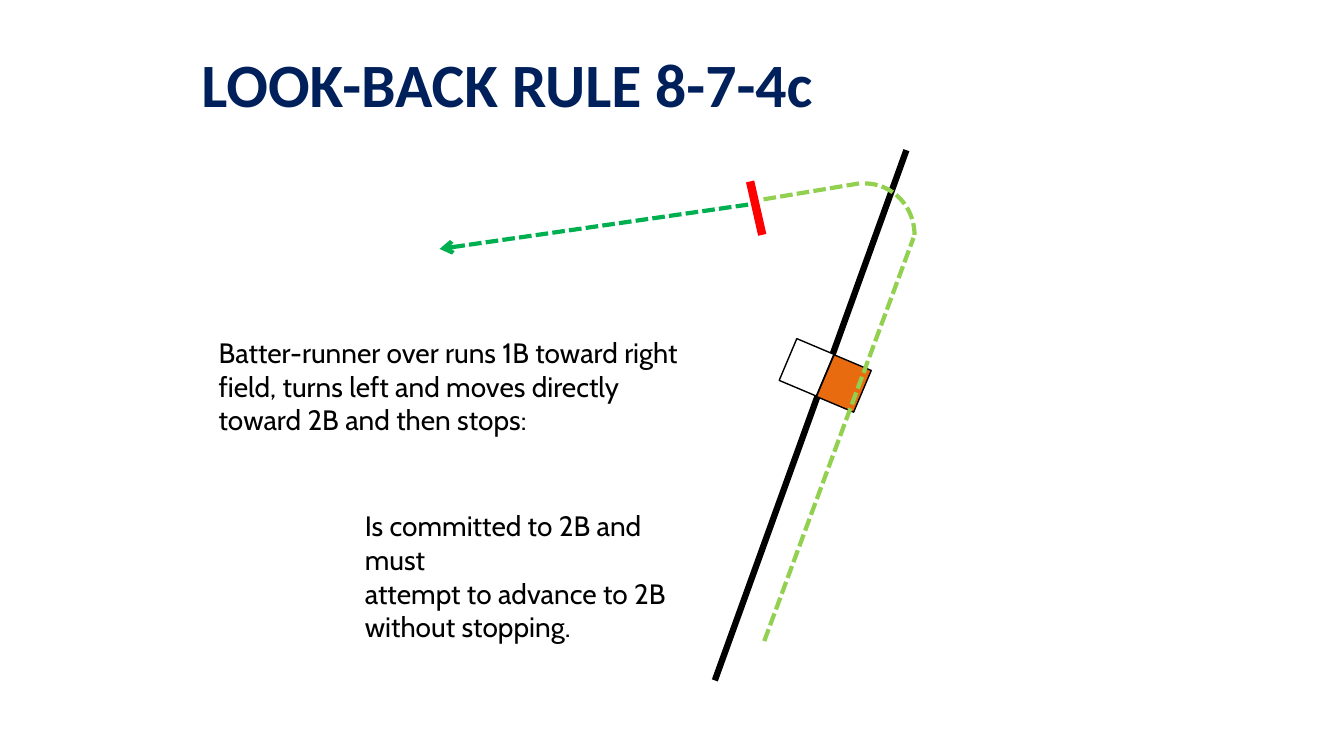
from dataclasses import dataclass

from lxml import etree
from pptx import Presentation
from pptx import util as u
from pptx.dml.color import RGBColor
from pptx.enum import dml, shapes, text
from pptx.oxml import ns

Inches, Pt = u.Inches, u.Pt


@dataclass(frozen=True)
class Theme:
    navy: str = "00205B"
    black: str = "000000"
    white: str = "FFFFFF"
    orange: str = "E96B10"
    lime: str = "92D050"
    green: str = "00B050"
    red: str = "FF0000"
    title_font: str = "Calibri"
    body_font: str = "Cabin"
    title_size: int = 44
    body_size: int = 20


THEME = Theme()


def style_line(line, color, width, dashed=False):
    line.color.rgb = RGBColor.from_string(color)
    line.width = Pt(width)
    if dashed:
        line.dash_style = dml.MSO_LINE.SQUARE_DOT


def add_text(page, place, paragraphs, font, size, color, bold=False,
             anchor=text.MSO_ANCHOR.TOP, spacing=None):
    box = page.shapes.add_textbox(*map(Inches, place))
    frame = box.text_frame
    frame.text = "\n".join(paragraphs)
    frame.word_wrap = True
    frame.vertical_anchor = anchor
    for para in frame.paragraphs:
        para.line_spacing = spacing
        for span in para.runs:
            span.font.name = font
            span.font.size = Pt(size)
            span.font.bold = bold
            span.font.color.rgb = RGBColor.from_string(color)


def add_line(page, start, end, color, width, dashed=False, arrow=False):
    connector = page.shapes.add_connector(
        shapes.MSO_CONNECTOR.STRAIGHT, *map(Inches, (*start, *end)))
    style_line(connector.line, color, width, dashed)
    if arrow:
        outline = connector.line._get_or_add_ln()
        etree.SubElement(outline, ns.qn("a:tailEnd"), type="arrow")
    etree.SubElement(connector._element.spPr, ns.qn("a:effectLst"))


def add_base(group, left, top, fill):
    base = group.shapes.add_shape(
        shapes.MSO_SHAPE.RECTANGLE, *map(Inches, (left, top, 0.4, 0.45)))
    base.rotation = 22.9
    base.shadow.inherit = False
    base.fill.solid()
    base.fill.fore_color.rgb = RGBColor.from_string(fill)
    style_line(base.line, THEME.black, 1)


def add_turn(page, place, color, width):
    turn = page.shapes.add_shape(shapes.MSO_SHAPE.ARC, *map(Inches, place))
    turn.shadow.inherit = False
    turn.fill.background()
    style_line(turn.line, color, width, dashed=True)


def main():
    deck = Presentation()
    deck.slide_width, deck.slide_height = Inches(13.33), Inches(7.5)
    page = deck.slides.add_slide(deck.slide_layouts[6])

    # Title
    add_text(page, (1.9, 0.19, 9.58, 1.36), ["LOOK-BACK RULE 8-7-4c"],
             THEME.title_font, THEME.title_size, THEME.navy, bold=True,
             anchor=text.MSO_ANCHOR.MIDDLE, spacing=0.9)

    # Foul line and double first base
    add_line(page, (7.09, 6.75), (8.99, 1.49), THEME.black, 4.5)
    double_base = page.shapes.add_group_shape()
    add_base(double_base, 7.8, 3.42, THEME.white)
    add_base(double_base, 8.17, 3.58, THEME.orange)

    # Run past first base
    add_line(page, (7.58, 6.36), (9.06, 2.36), THEME.lime, 3, dashed=True)

    # Ruling and situation
    body = (THEME.body_font, THEME.body_size, THEME.black)
    add_text(page, (3.52, 5, 3.55, 1.11),
             ["Is committed to 2B and must", "attempt to advance to 2B",
              "without stopping."], *body)
    add_text(page, (2.07, 3.28, 4.79, 1.11),
             ["Batter-runner over runs 1B toward right field, turns left "
              "and moves directly toward 2B and then stops:"], *body)

    # Stop mark, left turn and path toward second base
    add_line(page, (7.44, 1.8), (7.56, 2.33), THEME.red, 6)
    add_turn(page, (8.09, 1.82, 0.98, 1.02), THEME.lime, 3)
    add_line(page, (8.52, 1.82), (7.56, 1.98), THEME.lime, 3, dashed=True)
    add_line(page, (7.42, 2.03), (4.36, 2.47), THEME.green, 3,
             dashed=True, arrow=True)

    deck.save("out.pptx")


if __name__ == "__main__":
    main()
